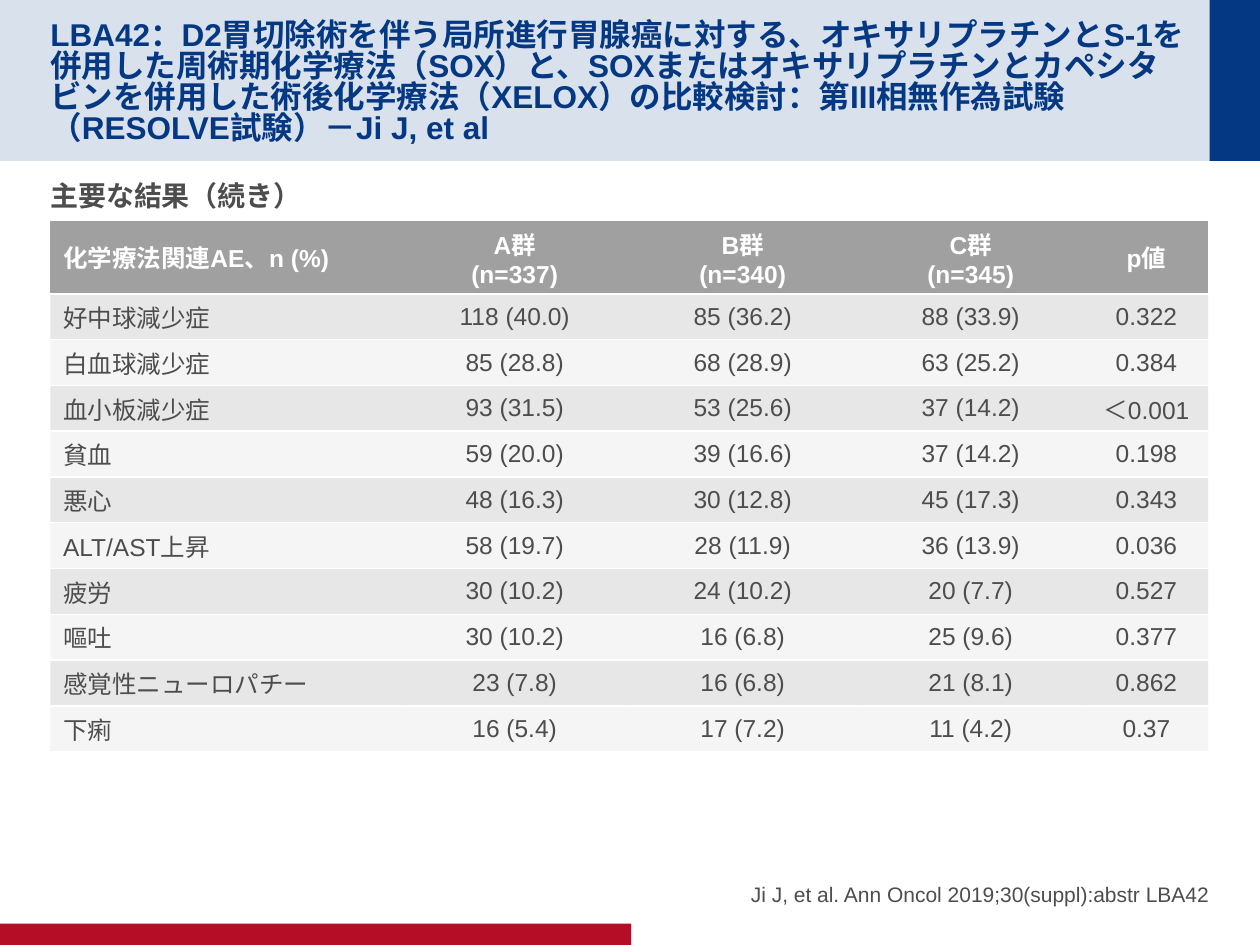
import pptx
import pptx.util
import pptx.dml.color
import pptx.enum.shapes
import pptx.enum.text
import pptx.oxml
import pptx.oxml.ns

Pt = pptx.util.Pt
Align = pptx.enum.text.PP_ALIGN
Anchor = pptx.enum.text.MSO_ANCHOR
NAVY, RED, TEXT, GREY, WHITE = "043882", "B60D27", "4D4D4D", "A0A0A0", "FFFFFF"


def paint(fill, color, element=None, opacity=100):
    fill.solid()
    fill.fore_color.rgb = pptx.dml.color.RGBColor.from_string(color)
    if opacity < 100:
        alpha = pptx.oxml.parse_xml(
            f'<a:alpha {pptx.oxml.ns.nsdecls("a")} val="{opacity * 1000}"/>')
        element.xpath(".//a:solidFill/a:srgbClr")[-1].append(alpha)


def write(frame, text, color, size, bold, align, formats):
    frame.text = text
    para = frame.paragraphs[0]
    para.alignment = align
    for name, value in formats.items():
        setattr(para, name, value)
    for span in para.runs:
        for name, value in {"name": "Arial", "size": Pt(size), "bold": bold}.items():
            setattr(span.font, name, value)
        paint(span.font.fill, color)


deck = pptx.Presentation()
deck.slide_width, deck.slide_height = Pt(720), Pt(540)
page = deck.slides.add_slide(deck.slide_layouts[3])
title, heading, citation = page.placeholders

bars = [
    (0, 0, 720, 92, NAVY, 15),
    (691.2, 0, 28.8, 92, NAVY, 100),
    (0, 527.8, 360.7, 12.2, RED, 100),
]
for left, top, width, height, color, opacity in bars:
    bar = page.shapes.add_shape(pptx.enum.shapes.MSO_SHAPE.RECTANGLE,
                                Pt(left), Pt(top), Pt(width), Pt(height))
    bar.shadow.inherit = False
    bar.line.fill.background()
    paint(bar.fill, color, bar.element, opacity)
    title.element.addprevious(bar.element)

title_text = ("LBA42：D2胃切除術を伴う局所進行胃腺癌に対する、オキサリプラチンとS-1を併用した"
              "周術期化学療法（SOX）と、SOXまたはオキサリプラチンとカペシタビンを併用した"
              "術後化学療法（XELOX）の比較検討：第III相無作為試験（RESOLVE試験）－Ji J, et al")
citation_text = "Ji J, et al. Ann Oncol 2019;30(suppl):abstr LBA42"
title_format = {"space_before": Pt(0), "line_spacing": 0.82}
body_format = {"space_before": Pt(0), "space_after": Pt(4)}
blocks = [
    (title, (28.8, 14.4, 648.7, 63.4), (3.6, 0), Anchor.MIDDLE,
     (title_text, NAVY, 18, True, Align.LEFT, title_format)),
    (heading, (28.8, 98.6, 662.4, 373.7), (3.6, 3.6), Anchor.TOP,
     ("主要な結果（続き）", TEXT, 16, True, Align.LEFT, body_format)),
    (citation, (365.8, 480.2, 325.4, 38.2), (0, 0), Anchor.BOTTOM,
     (citation_text, TEXT, 12, False, Align.RIGHT, body_format)),
]
for box, place, (inset_top, inset_bottom), anchor, content in blocks:
    for name, value in zip(("left", "top", "width", "height"), place):
        setattr(box, name, Pt(value))
    frame = box.text_frame
    write(frame, *content)
    frame_format = {"margin_left": 0, "margin_right": 0, "margin_top": Pt(inset_top),
                    "margin_bottom": Pt(inset_bottom), "vertical_anchor": anchor,
                    "word_wrap": True, "auto_size": pptx.enum.text.MSO_AUTO_SIZE.NONE}
    for name, value in frame_format.items():
        setattr(frame, name, value)
    if box is not title:
        properties = frame.paragraphs[0]._p.get_or_add_pPr()
        properties.set("marL", "0")
        properties.set("indent", "0")
        properties.append(pptx.oxml.parse_xml(f'<a:buNone {pptx.oxml.ns.nsdecls("a")}/>'))

rows = [
    ("化学療法関連AE、n (%)", "A群\v(n=337)", "B群\v(n=340)", "C群\v(n=345)", "p値"),
    ("好中球減少症", "118 (40.0)", "85 (36.2)", "88 (33.9)", "0.322"),
    ("白血球減少症", "85 (28.8)", "68 (28.9)", "63 (25.2)", "0.384"),
    ("血小板減少症", "93 (31.5)", "53 (25.6)", "37 (14.2)", "＜0.001"),
    ("貧血", "59 (20.0)", "39 (16.6)", "37 (14.2)", "0.198"),
    ("悪心", "48 (16.3)", "30 (12.8)", "45 (17.3)", "0.343"),
    ("ALT/AST上昇", "58 (19.7)", "28 (11.9)", "36 (13.9)", "0.036"),
    ("疲労", "30 (10.2)", "24 (10.2)", "20 (7.7)", "0.527"),
    ("嘔吐", "30 (10.2)", "16 (6.8)", "25 (9.6)", "0.377"),
    ("感覚性ニューロパチー", "23 (7.8)", "16 (6.8)", "21 (8.1)", "0.862"),
    ("下痢", "16 (5.4)", "17 (7.2)", "11 (4.2)", "0.37"),
]
column_widths = [200.2, 130.3, 130.3, 130.3, 70.6]
row_heights = [41.8] + [26.1] * (len(rows) - 1)
table_shape = page.shapes.add_table(len(rows), len(column_widths), Pt(28.8), Pt(126),
                                    Pt(sum(column_widths)), Pt(sum(row_heights)))
table = table_shape.table
table_shape.element.xpath(".//a:tableStyleId")[0].text = "{2D5ABB26-0587-4C30-8999-92F81FD0307C}"
for column, width in zip(table.columns, column_widths):
    column.width = Pt(width)
cell_format = {"margin_left": Pt(7.2), "margin_right": Pt(7.2), "margin_top": Pt(2.88),
               "margin_bottom": Pt(2.88), "vertical_anchor": Anchor.MIDDLE}
for row_index, (values, height) in enumerate(zip(rows, row_heights)):
    table.rows[row_index].height = Pt(height)
    header = row_index == 0
    opacity = 100 if header else 25 if row_index % 2 else 10
    for column_index, value in enumerate(values):
        cell = table.cell(row_index, column_index)
        write(cell.text_frame, value, WHITE if header else TEXT, 14, header,
              Align.CENTER if column_index else Align.LEFT, {})
        for name, setting in cell_format.items():
            setattr(cell, name, setting)
        properties = cell._tc.get_or_add_tcPr()
        paint(cell.fill, GREY, properties, opacity)
        for position, side in enumerate(("lnT", "lnB")):
            properties.insert(position, pptx.oxml.parse_xml(
                f'<a:{side} {pptx.oxml.ns.nsdecls("a")} w="{Pt(1)}"><a:solidFill>'
                f'<a:srgbClr val="{WHITE}"/></a:solidFill></a:{side}>'))

deck.save("out.pptx")
